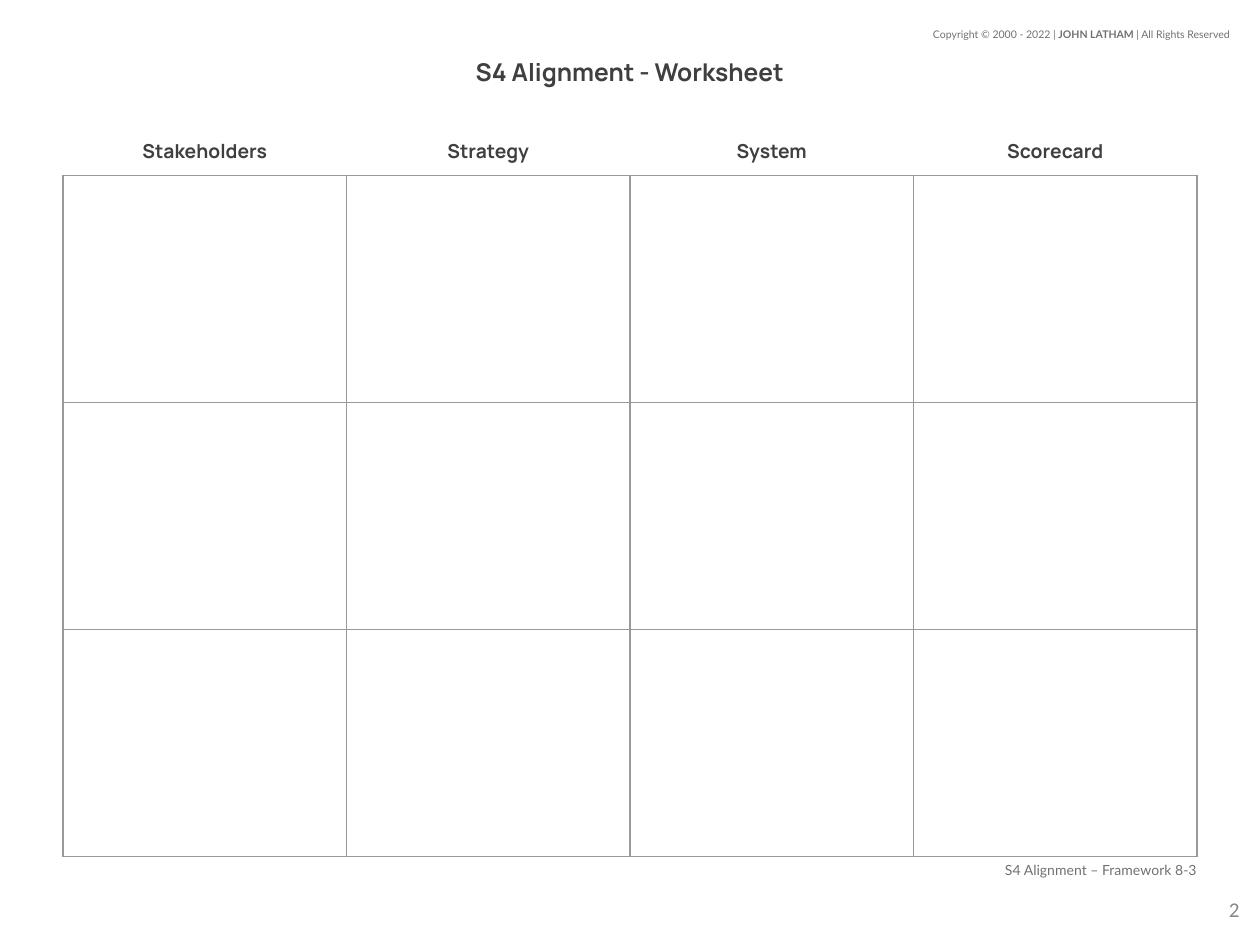
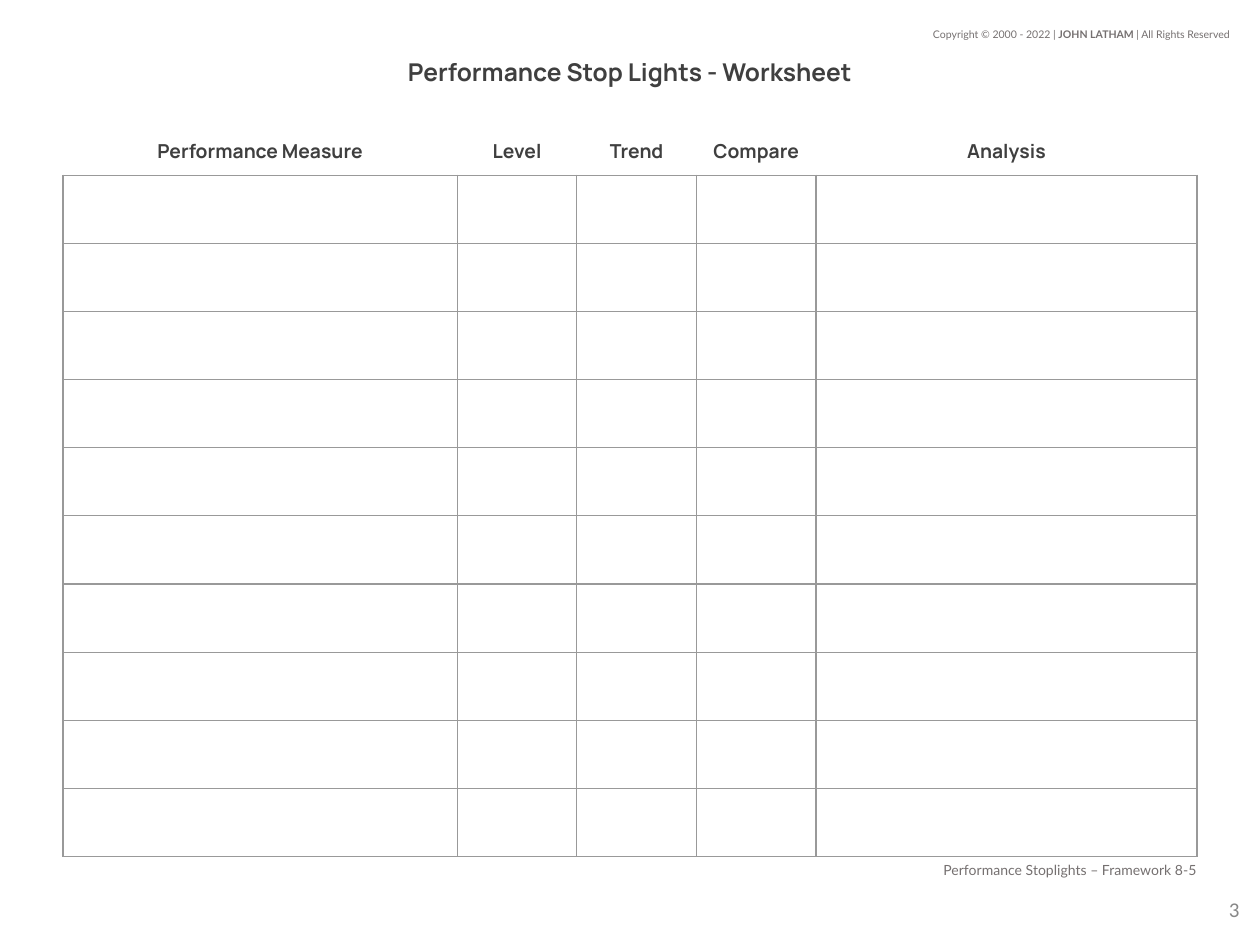
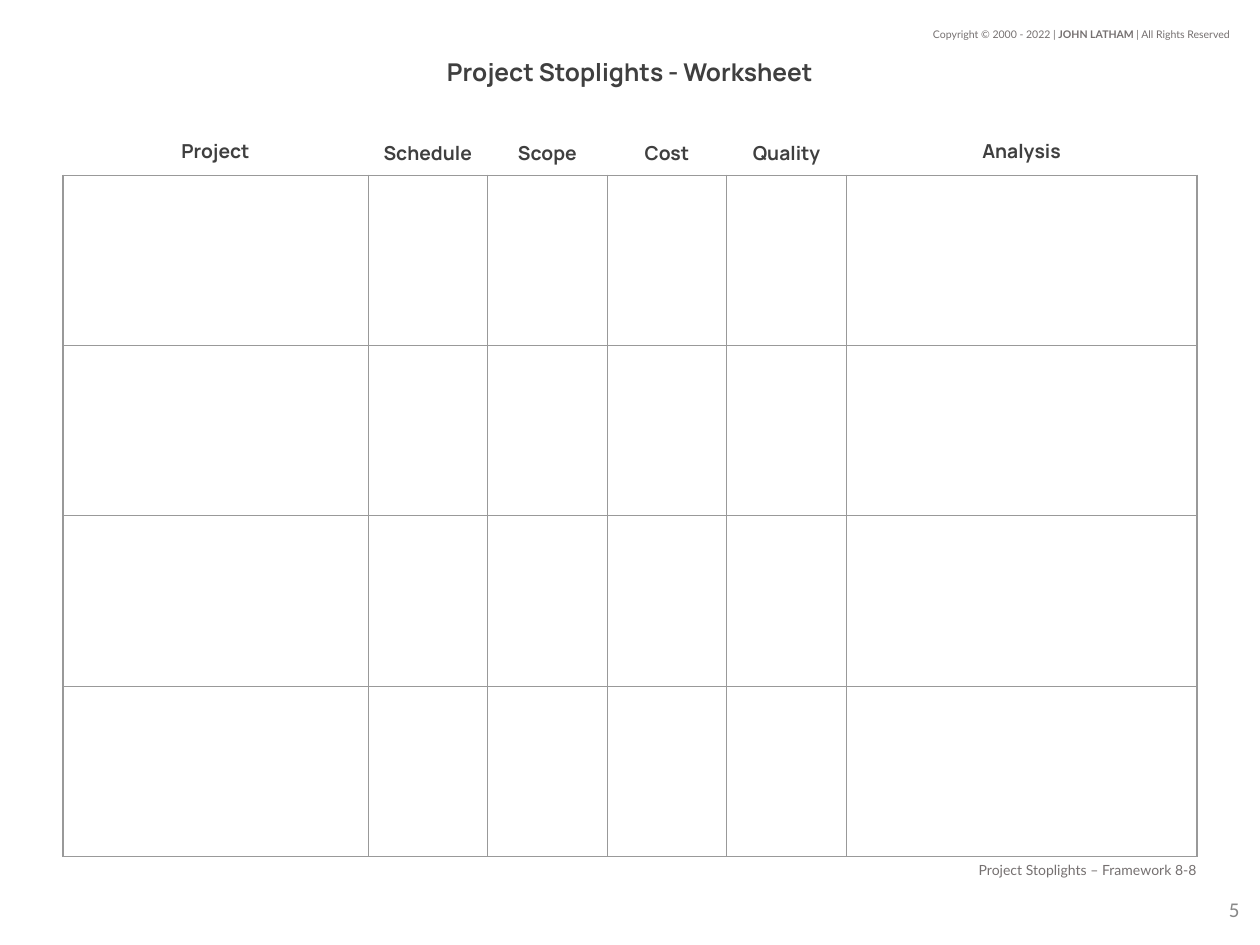
from lxml import etree
from pptx import Presentation
from pptx.dml.color import RGBColor
from pptx.enum.text import MSO_ANCHOR, MSO_AUTO_SIZE, PP_ALIGN
from pptx.oxml.ns import qn
from pptx.util import Cm, Pt

LEFT, CENTER, RIGHT = PP_ALIGN.LEFT, PP_ALIGN.CENTER, PP_ALIGN.RIGHT
TOP, MIDDLE = MSO_ANCHOR.TOP, MSO_ANCHOR.MIDDLE
FIT_SHAPE = MSO_AUTO_SIZE.SHAPE_TO_FIT_TEXT

COLORS = {"heading": "3F3F3F", "caption": "757070", "page": "888888", "grid": "999999"}

# Shared text styles
STYLES = {
    "title": {"name": "Manrope", "size": Pt(14), "bold": True, "color": "heading"},
    "header": {"name": "Manrope", "size": Pt(11), "bold": True, "color": "heading"},
    "caption": {"name": "Lato", "size": Pt(8), "bold": False, "color": "caption"},
    "copyright": {"name": "Lato", "size": Pt(6), "bold": False, "color": "caption"},
    "page": {"name": "Calibri", "size": Pt(12), "bold": False, "color": "page"},
}

# Shared geometry, in centimetres
MARGIN, CONTENT_WIDTH = 1.27, 22.86
HEADER_TOP, HEADER_HEIGHT = 2.54, 0.99
GRID_TOP, GRID_HEIGHT = 3.53, 13.74
INSET = 0.25
STATUS_WIDTH = 2.41

COPYRIGHT = [
    ("Copyright © 2000 - 2022 | ", False),
    ("JOHN LATHAM ", True),
    ("| All Rights Reserved", False),
]

# "widths" are column widths, "split" divides the last column into two merged ones,
# "drop" lowers the headers between the first and the last column
WORKSHEETS = [
    {
        "title": "S4 Alignment - Worksheet",
        "caption": "S4 Alignment – Framework 8-3",
        "page": "2",
        "headers": ["Stakeholders", "Strategy", "System", "Scorecard"],
        "widths": [CONTENT_WIDTH / 4] * 4,
        "rows": 3,
    },
    {
        "title": "Performance Stop Lights - Worksheet",
        "caption": "Performance Stoplights – Framework 8-5",
        "page": "3",
        "headers": ["Performance Measure", "Level", "Trend", "Compare", "Analysis"],
        "widths": [7.95] + [STATUS_WIDTH] * 3 + [7.68],
        "split": 4.68,
        "rows": 10,
    },
    {
        "title": "Project Stoplights - Worksheet",
        "caption": "Project Stoplights – Framework 8-8",
        "page": "5",
        "headers": ["Project", "Schedule", "Scope", "Cost", "Quality", "Analysis"],
        "widths": [6.15] + [STATUS_WIDTH] * 4 + [7.07],
        "drop": 0.04,
        "rows": 4,
    },
]


def style_font(font, style):
    for attribute, value in style.items():
        if attribute == "color":
            font.color.rgb = RGBColor.from_string(COLORS[value])
        else:
            setattr(font, attribute, value)


def add_label(slide, runs, box, style, align=CENTER, **frame_format):
    """Place one line of text, given as a string or as (text, bold) runs."""
    frame = slide.shapes.add_textbox(*map(Cm, box)).text_frame
    settings = {
        "word_wrap": True,
        "vertical_anchor": MIDDLE,
        "margin_left": Cm(INSET),
        "margin_right": Cm(INSET),
        "margin_top": Cm(INSET),
        "margin_bottom": Cm(INSET),
    }
    for attribute, value in {**settings, **frame_format}.items():
        setattr(frame, attribute, value)
    line = frame.paragraphs[0]
    line.alignment = align
    if isinstance(runs, str):
        runs = [(runs, STYLES[style]["bold"])]
    for text, bold in runs:
        run = line.add_run()
        run.text = text
        style_font(run.font, {**STYLES[style], "bold": bold})


def outline_cell(cell):
    properties = cell._tc.get_or_add_tcPr()
    for side in ("lnL", "lnR", "lnT", "lnB"):
        border = etree.SubElement(properties, qn(f"a:{side}"), w=str(Pt(0.75)))
        fill = etree.SubElement(border, qn("a:solidFill"))
        etree.SubElement(fill, qn("a:srgbClr"), val=COLORS["grid"])
    cell.fill.background()


def add_grid(slide, widths, rows, split=None):
    if split:
        widths = widths[:-1] + [split, widths[-1] - split]
    last = len(widths) - 1
    grid = slide.shapes.add_table(
        rows, len(widths), Cm(MARGIN), Cm(GRID_TOP), Cm(CONTENT_WIDTH), Cm(GRID_HEIGHT)
    ).table
    grid.first_row = grid.horz_banding = False
    for column, width in zip(grid.columns, widths):
        column.width = Cm(width)
    for row in grid.rows:
        row.height = Cm(GRID_HEIGHT / rows)
        for cell in row.cells:
            outline_cell(cell)
    if split:
        for row in range(rows):
            grid.cell(row, last - 1).merge(grid.cell(row, last))


def add_headers(slide, headers, widths, drop=0):
    left = MARGIN
    for index, (header, width) in enumerate(zip(headers, widths)):
        inner = 0 < index < len(headers) - 1
        top = HEADER_TOP + (drop if inner else 0)
        add_label(slide, header, (left, top, width, HEADER_HEIGHT), "header")
        left += width


def add_frame(slide, title, caption, page):
    """Add the copyright line, page number, title and caption of a worksheet."""
    add_label(slide, COPYRIGHT, (18.49, 0.43, 6.55, 0.51), "copyright", RIGHT,
              vertical_anchor=TOP, margin_top=Cm(0.13), margin_bottom=Cm(0.13),
              auto_size=FIT_SHAPE)
    add_label(slide, page, (23.72, 17.6, 1.52, 1.45), "page", RIGHT)
    add_label(slide, title, (MARGIN, 1.07, CONTENT_WIDTH, 0.76), "title")
    add_label(slide, caption, (MARGIN, GRID_TOP + GRID_HEIGHT, CONTENT_WIDTH, 0.53),
              "caption", RIGHT, margin_right=0)


def main():
    deck = Presentation()
    deck.slide_width, deck.slide_height = Cm(25.4), Cm(19.05)
    blank = deck.slide_layouts[6]
    for sheet in WORKSHEETS:
        slide = deck.slides.add_slide(blank)
        add_frame(slide, sheet["title"], sheet["caption"], sheet["page"])
        add_grid(slide, sheet["widths"], sheet["rows"], sheet.get("split"))
        add_headers(slide, sheet["headers"], sheet["widths"], sheet.get("drop", 0))
    deck.save("out.pptx")


if __name__ == "__main__":
    main()
